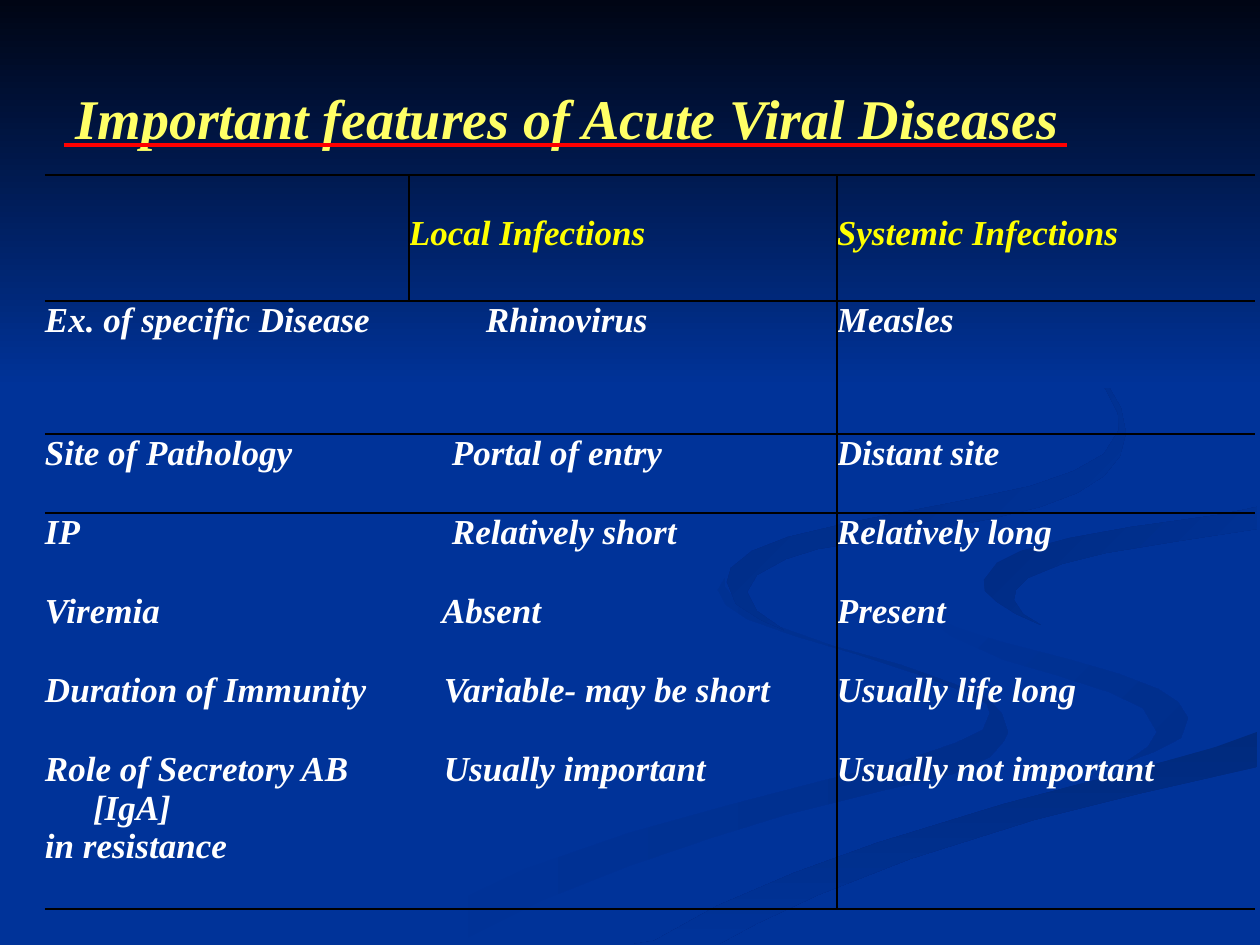
from lxml import etree
from pptx import Presentation
from pptx import util as u
from pptx.dml.color import RGBColor
from pptx.enum import shapes, text
from pptx.oxml import ns

PX = u.Inches(1) / 126
FONT = "Times New Roman"
BLUE = RGBColor(0x00, 0x33, 0x99)
NIGHT = RGBColor(0x00, 0x05, 0x14)
SHADE = RGBColor(0x00, 0x2B, 0x82)
DEEP = RGBColor(0x00, 0x2A, 0x7D)
SOFT = RGBColor(0x00, 0x2E, 0x8B)
PALE_YELLOW = RGBColor(0xFF, 0xFF, 0x66)
YELLOW = RGBColor(0xFF, 0xFF, 0x00)
WHITE = RGBColor(0xFF, 0xFF, 0xFF)
RED = RGBColor(0xFF, 0x00, 0x00)
BLACK = RGBColor(0x00, 0x00, 0x00)
PLAIN_TABLE = "{2D5ABB26-0587-4C30-8999-92F81FD0307C}"

LOWER_SWIRL = [
    (984, 697), (954, 684), (901, 665), (833, 646), (774, 625), (740, 606),
    (725, 587), (725, 578), (718, 590), (726, 605), (747, 619), (795, 636),
    (856, 654), (917, 674), (970, 694), (987, 704), (990, 713), (983, 730),
    (956, 743), (900, 762), (822, 781), (730, 805), (629, 833), (525, 869),
    (426, 916), (378, 944), (455, 944), (543, 900), (629, 866), (711, 838),
    (785, 815), (881, 791), (953, 774), (990, 757), (1004, 741), (1008, 732),
    (1002, 714), (990, 701)]
RIGHT_SWIRL = [
    (1188, 718), (1178, 702), (1158, 689), (1119, 674), (1071, 660),
    (998, 641), (955, 627), (924, 609), (912, 585), (914, 597), (924, 615),
    (951, 636), (1004, 660), (1056, 675), (1109, 692), (1143, 708),
    (1157, 732), (1148, 747), (1126, 762), (1154, 752), (1181, 738)]
TAIL_SWIRL = [
    (634, 944), (719, 944), (756, 924), (818, 895), (910, 859), (1034, 820),
    (1138, 794), (1257, 767), (1257, 732), (1213, 748), (1138, 769),
    (1004, 804), (877, 843), (794, 873), (717, 906), (654, 941)]
EDGE_SWIRL = [
    (984, 580), (985, 591), (997, 602), (1016, 614), (1041, 625),
    (1023, 614), (1014, 600), (1016, 590), (1028, 578), (1062, 564),
    (1106, 553), (1179, 541), (1257, 529), (1257, 507), (1218, 515),
    (1131, 527), (1070, 538), (1021, 551), (997, 563)]
UPPER_SWIRL = [
    (861, 542), (931, 530), (990, 519), (1040, 507), (1077, 493),
    (1104, 476), (1120, 456), (1126, 433), (1121, 408), (1109, 387),
    (1076, 357), (1034, 329), (960, 294), (1014, 320), (1066, 352),
    (1104, 386), (1118, 413), (1119, 430), (1104, 454), (1074, 471),
    (1031, 486), (961, 501), (852, 522), (788, 537), (752, 551), (731, 568),
    (727, 582), (736, 604), (761, 620), (784, 630), (757, 611), (747, 592),
    (757, 575), (786, 559), (818, 549)]
SWIRLS = [
    (LOWER_SWIRL, BLUE, SOFT, 0),
    (RIGHT_SWIRL, BLUE, SOFT, 315),
    (TAIL_SWIRL, DEEP, BLUE, 270),
    (EDGE_SWIRL, SHADE, BLUE, 315),
    (UPPER_SWIRL, SHADE, BLUE, 315)]

COLUMNS = [364, 428, 418]
ROWS = [126, 133, 79, 79, 79, 79, 159]
FEATURES = [
    ("", "Local Infections", "Systemic Infections"),
    ("Ex. of specific Disease", "Rhinovirus", "Measles"),
    ("Site of Pathology", "Portal of entry", "Distant site"),
    ("IP", "Relatively short", "Relatively long"),
    ("Viremia", "Absent", "Present"),
    ("Duration of Immunity", "Variable- may be short", "Usually life long"),
    ("Role of Secretory AB [IgA]\nin resistance", "Usually important",
     "Usually not important")]
LOCAL_INSETS = [0, 77, 43, 43, 33, 35, 35]
RULED_ROWS = (0, 1, len(ROWS) - 1)


def px(length):
    return u.Emu(round(length * PX))


def style(paragraph, size, color):
    for run in paragraph.runs:
        font = run.font
        font.name, font.size = FONT, u.Pt(size)
        font.bold = font.italic = True
        font.color.rgb = color


def shade(shape, start, end, angle):
    shape.shadow.inherit = False
    shape.line.fill.background()
    shape.fill.gradient()
    shape.fill.gradient_angle = angle
    for stop, color in zip(shape.fill.gradient_stops, (start, end)):
        stop.color.rgb = color


def add_backdrop(slide, width, sky_height):
    slide.background.fill.solid()
    slide.background.fill.fore_color.rgb = BLUE
    for outline, start, end, angle in SWIRLS:
        builder = slide.shapes.build_freeform(*outline[0], scale=PX)
        builder.add_line_segments(outline[1:], close=True)
        shade(builder.convert_to_shape(), start, end, angle)
    sky = slide.shapes.add_shape(
        shapes.MSO_SHAPE.RECTANGLE, 0, 0, px(width), px(sky_height))
    shade(sky, NIGHT, BLUE, 270)


def add_heading(slide, left, top, width, height):
    title = slide.shapes.title
    slide.shapes._spTree.append(title._element)
    title.left, title.top = px(left), px(top)
    title.width, title.height = px(width), px(height)
    frame = title.text_frame
    frame.text = "Important features of Acute Viral Diseases"
    frame.vertical_anchor = text.MSO_ANCHOR.MIDDLE
    frame.paragraphs[0].alignment = text.PP_ALIGN.LEFT
    style(frame.paragraphs[0], 32, PALE_YELLOW)


def add_underline(slide, left, top, width):
    underline = slide.shapes.add_connector(
        shapes.MSO_CONNECTOR.STRAIGHT,
        px(left), px(top), px(left + width), px(top))
    underline.line.color.rgb = RED
    underline.line.width = u.Pt(2.25)
    etree.SubElement(underline._element.spPr, ns.qn("a:effectLst"))


def rule_cell(cell, sides):
    properties = cell._tc.get_or_add_tcPr()
    for side in sides:
        edge = etree.SubElement(
            properties, ns.qn(f"a:ln{side}"), w=str(u.Pt(1)))
        fill = etree.SubElement(edge, ns.qn("a:solidFill"))
        etree.SubElement(fill, ns.qn("a:srgbClr"), val=str(BLACK))
    cell.fill.background()


def cell_sides(row, column):
    sides = ""
    if column == 2 or (row, column) == (0, 1):
        sides += "L"
    if column == 1 or (row, column) == (0, 0):
        sides += "R"
    if row == 0 or row - 1 in RULED_ROWS:
        sides += "T"
    if row in RULED_ROWS:
        sides += "B"
    return sides


def fill_cell(cell, wording, row, column):
    cell.margin_left = px(LOCAL_INSETS[row] if column == 1 else 0)
    cell.margin_top = px(39 if row == 0 else 0)
    cell.margin_right = cell.margin_bottom = 0
    cell.text_frame.text = wording
    for paragraph in cell.text_frame.paragraphs:
        indents = paragraph._p.get_or_add_pPr()
        indents.set("marL", str(px(48)))
        indents.set("indent", str(-px(48)))
        style(paragraph, 20, YELLOW if row == 0 else WHITE)
    rule_cell(cell, cell_sides(row, column))


def add_features(slide, left, top):
    features = slide.shapes.add_table(
        len(ROWS), len(COLUMNS), px(left), px(top),
        px(sum(COLUMNS)), px(sum(ROWS))).table
    features.first_row = features.horz_banding = False
    features._tbl.tblPr.find(ns.qn("a:tableStyleId")).text = PLAIN_TABLE
    for column, width in zip(features.columns, COLUMNS):
        column.width = px(width)
    for row, height in zip(features.rows, ROWS):
        row.height = px(height)
    for row, wordings in enumerate(FEATURES):
        for column, wording in enumerate(wordings):
            fill_cell(features.cell(row, column), wording, row, column)


def main():
    deck = Presentation()
    deck.slide_width, deck.slide_height = px(1260), px(945)
    slide = deck.slides.add_slide(deck.slide_layouts[5])
    add_backdrop(slide, 1260, 388)
    add_heading(slide, 63, 38, 1113, 158)
    add_features(slide, 45, 175)
    add_underline(slide, 64, 145, 1003)
    deck.save("out.pptx")


if __name__ == "__main__":
    main()
